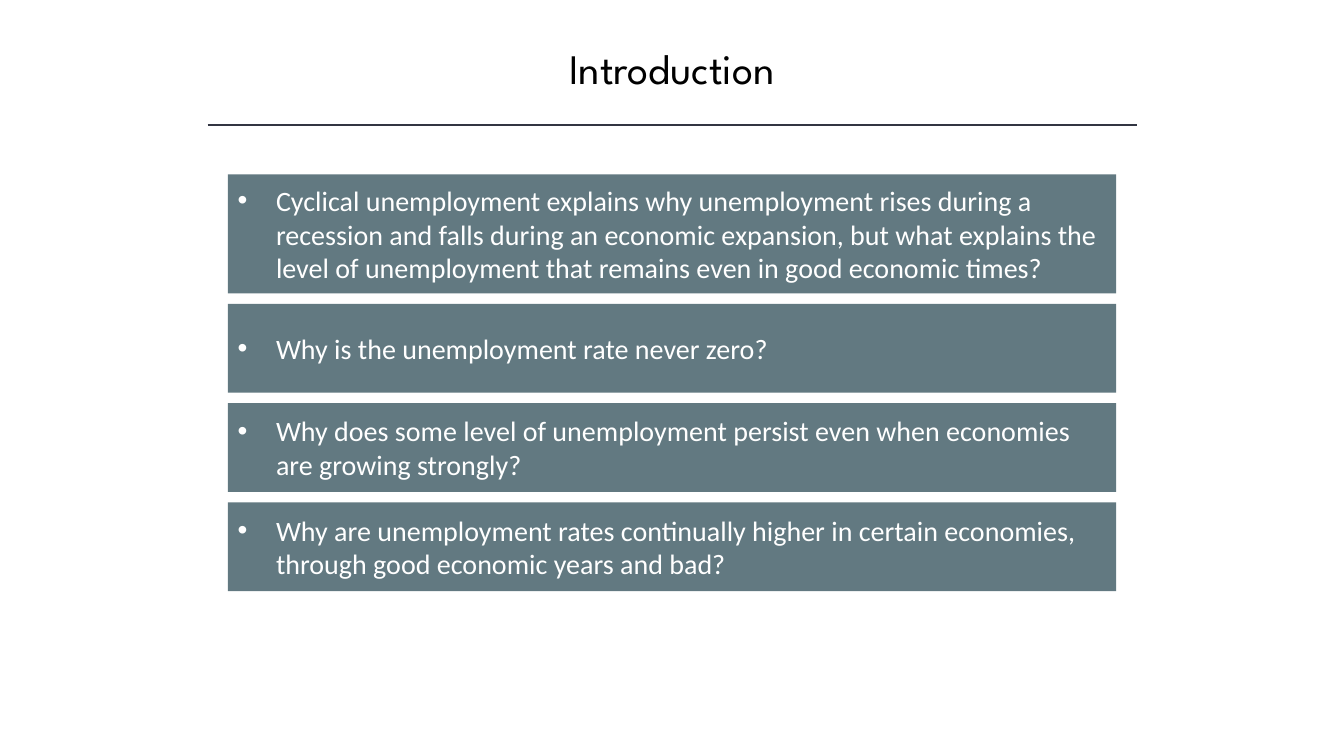
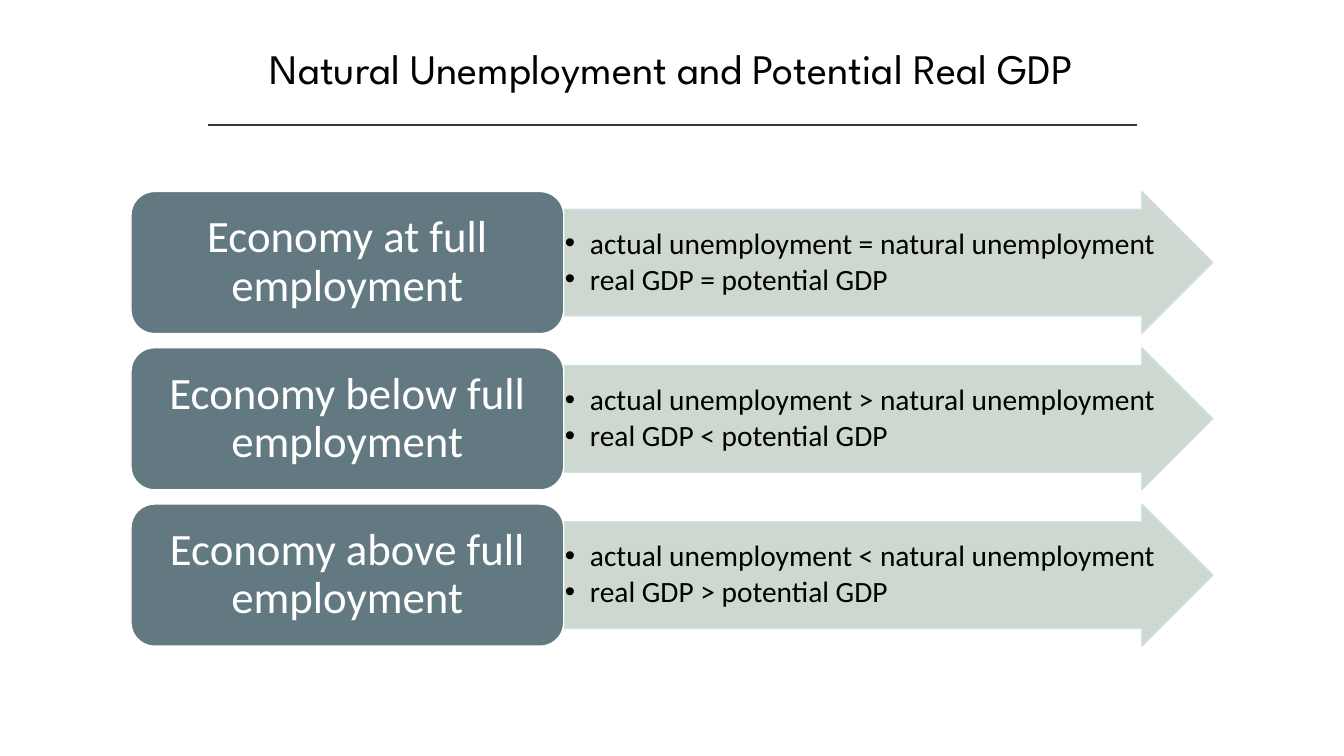
import dataclasses
import typing

import lxml.etree
import pptx
import pptx.dml.color
import pptx.enum.shapes
import pptx.enum.text
import pptx.oxml.ns
import pptx.util

SHAPE = pptx.enum.shapes.MSO_SHAPE
ALIGN = pptx.enum.text.PP_ALIGN
MIDDLE = pptx.enum.text.MSO_ANCHOR.MIDDLE
WIDTH, HEIGHT = 13.33, 7.5
SLATE, SAGE, MIST, INK = "627981", "C7D4CB", "D2DEEF", "323542"
BLACK, WHITE = "000000", "FFFFFF"
HEAD, BODY = "League Spartan", "Calibri"


@dataclasses.dataclass(frozen=True)
class Box:
    """Shares of the slide's width and height, in percent."""
    left: float
    top: float
    width: float
    height: float


@dataclasses.dataclass(frozen=True)
class Style:
    font: str
    size: float
    color: str
    align: typing.Any = ALIGN.LEFT
    indent: float = 0
    lead: float = 1
    after: float = 0


@dataclasses.dataclass(frozen=True)
class Card:
    text: str
    height: float = 11.73


@dataclasses.dataclass(frozen=True)
class Band:
    state: str
    facts: tuple[str, ...]


TITLE = Style(HEAD, 30, BLACK, ALIGN.CENTER)
QUERY = Style(BODY, 20, WHITE, indent=0.38)
STATE = Style(BODY, 32, WHITE, ALIGN.CENTER, lead=0.9)
FACT = Style(BODY, 21, BLACK, indent=0.25, lead=0.9, after=3)

CARDS = (
    Card("Cyclical unemployment explains why unemployment rises during a "
         "recession and falls during an economic expansion, but what explains "
         "the level of unemployment that remains even in good economic times?",
         15.73),
    Card("Why is the unemployment rate never zero?"),
    Card("Why does some level of unemployment persist even when economies "
         "are growing strongly?"),
    Card("Why are unemployment rates continually higher in certain economies, "
         "through good economic years and bad?"),
)
BANDS = (
    Band("Economy at full employment",
         ("actual unemployment = natural unemployment",
          "real GDP = potential GDP")),
    Band("Economy below full employment",
         ("actual unemployment > natural unemployment",
          "real GDP < potential GDP")),
    Band("Economy above full employment",
         ("actual unemployment < natural unemployment",
          "real GDP > potential GDP")),
)


def across(share: float) -> int:
    return pptx.util.Inches(WIDTH * share / 100)


def down(share: float) -> int:
    return pptx.util.Inches(HEIGHT * share / 100)


def place(box: Box) -> tuple[int, int, int, int]:
    return across(box.left), down(box.top), across(box.width), down(box.height)


def tint(code: str) -> pptx.dml.color.RGBColor:
    return pptx.dml.color.RGBColor.from_string(code)


def tag(root, name: str, **attrs: str):
    return lxml.etree.SubElement(root, pptx.oxml.ns.qn(name), attrs)


def write(frame, lines: typing.Sequence[str], style: Style, pad=(0.1, 0.05)) -> None:
    frame.word_wrap = True
    frame.vertical_anchor = MIDDLE
    frame.margin_left = frame.margin_right = pptx.util.Inches(pad[0])
    frame.margin_top = frame.margin_bottom = pptx.util.Inches(pad[1])
    for rank, line in enumerate(lines):
        para = frame.paragraphs[0] if rank == 0 else frame.add_paragraph()
        para.text = line
        para.alignment = style.align
        para.line_spacing = style.lead
        para.space_after = pptx.util.Pt(style.after)
        if style.indent:
            props = para._p.get_or_add_pPr()
            inset = pptx.util.Inches(style.indent)
            props.set("marL", str(inset))
            props.set("indent", str(-inset))
            tag(props, "a:buFont", typeface="Arial")
            tag(props, "a:buChar", char="•")
        para.font.name = style.font
        para.font.size = pptx.util.Pt(style.size)
        para.font.color.rgb = tint(style.color)


def block(slide, kind, box: Box, fill: str, edge: str = "", alpha: int = 100):
    shape = slide.shapes.add_shape(kind, *place(box))
    shape.shadow.inherit = False
    shape.fill.solid()
    shape.fill.fore_color.rgb = tint(fill)
    if edge:
        shape.line.color.rgb = tint(edge)
        shape.line.width = pptx.util.Pt(1)
    else:
        shape.line.fill.background()
    if alpha < 100:
        for color in shape._element.spPr.iter(pptx.oxml.ns.qn("a:srgbClr")):
            tag(color, "a:alpha", val=str(alpha * 1000))
    return shape


def start(deck, title: str):
    slide = deck.slides.add_slide(deck.slide_layouts[6])
    text = slide.shapes.add_textbox(*place(Box(12.5, 4.93, 75, 8.13)))
    write(text.text_frame, [title], TITLE)
    rule = slide.shapes.add_connector(
        pptx.enum.shapes.MSO_CONNECTOR.STRAIGHT,
        across(15.45), down(16.53), across(84.6), down(16.53))
    rule.line.color.rgb = tint(INK)
    rule.line.width = pptx.util.Pt(1)
    tag(rule._element.spPr, "a:effectLst")
    return slide


def stack(slide, cards: typing.Sequence[Card]) -> None:
    top, gap = 23.07, 1.4
    for card in cards:
        box = Box(16.95, top, 66.1, card.height)
        shape = block(slide, SHAPE.RECTANGLE, box, SLATE)
        write(shape.text_frame, [card.text], QUERY)
        top += card.height + gap


def chart(slide, bands: typing.Sequence[Band]) -> None:
    left, split, right = 9.75, 41.95, 90.25
    first, step, height = 25.33, 20.67, 18.8
    for row, band in enumerate(bands):
        top = first + row * step
        arrow = block(slide, SHAPE.RIGHT_ARROW,
                      Box(split, top, right - split, height), SAGE, MIST, 90)
        arrow.adjustments[0] = 0.75
        arrow.adjustments[1] = 0.5
        write(arrow.text_frame, band.facts, FACT, (0.01, 0.01))
        label = block(slide, SHAPE.ROUNDED_RECTANGLE,
                      Box(left, top, split - left, height), SLATE, WHITE)
        write(label.text_frame, [band.state], STATE, (0.13, 0.07))


def main() -> None:
    deck = pptx.Presentation()
    deck.slide_width = pptx.util.Inches(WIDTH)
    deck.slide_height = pptx.util.Inches(HEIGHT)
    stack(start(deck, "Introduction"), CARDS)
    chart(start(deck, "Natural Unemployment and Potential Real GDP"), BANDS)
    deck.save("out.pptx")


if __name__ == "__main__":
    main()
